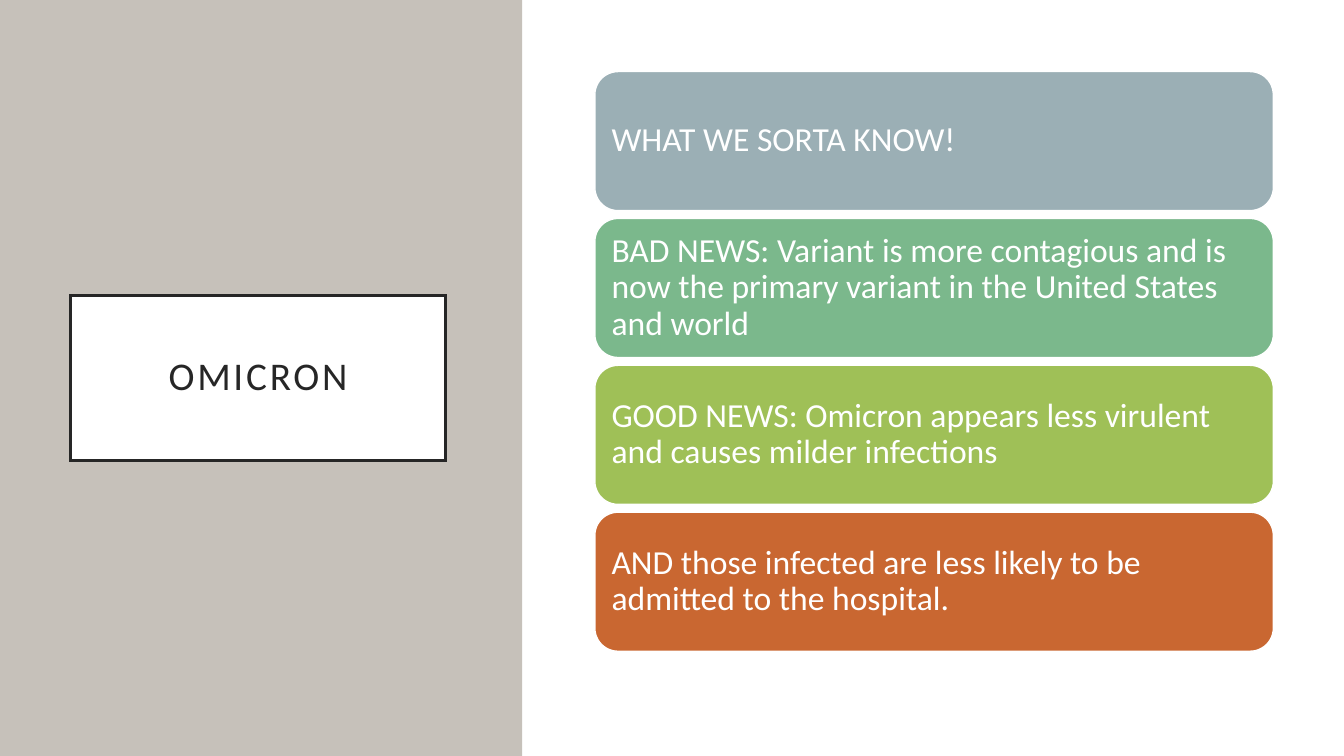
from collections import namedtuple

from lxml.etree import SubElement
from pptx import Presentation
from pptx.dml.color import RGBColor
from pptx.enum.shapes import MSO_SHAPE
from pptx.enum.text import MSO_ANCHOR, MSO_AUTO_SIZE, PP_ALIGN
from pptx.oxml.ns import qn
from pptx.util import Inches, Pt

Theme = namedtuple("Theme", "font ink white panel cards head body")
theme = Theme(
    font="Calibri",
    ink=RGBColor.from_string("262626"),
    white=RGBColor.from_string("FFFFFF"),
    panel=RGBColor.from_string("C6C1BA"),
    cards=[RGBColor.from_string(c) for c in ("9BAFB5", "7BB88C", "9FC057", "C96731")],
    head=Pt(28),
    body=Pt(24),
)


def paint(shape, fill, line=None, width=0):
    shape.fill.solid()
    shape.fill.fore_color.rgb = fill
    if line is None:
        shape.line.fill.background()
    else:
        shape.line.color.rgb = line
        shape.line.width = Pt(width)


def write(shape, text, size, color, align, inset):
    frame = shape.text_frame
    frame.text = text
    para = frame.paragraphs[0]
    pad = Inches(inset)
    formats = {
        frame: {"word_wrap": True, "auto_size": MSO_AUTO_SIZE.NONE,
                "vertical_anchor": MSO_ANCHOR.MIDDLE,
                "margin_left": pad, "margin_right": pad,
                "margin_top": pad, "margin_bottom": pad},
        para: {"alignment": align, "line_spacing": 0.9},
        para.runs[0].font: {"name": theme.font, "size": size},
    }
    for target, values in formats.items():
        for name, value in values.items():
            setattr(target, name, value)
    para.runs[0].font.color.rgb = color


deck = Presentation()
deck.slide_width = Inches(13.33)
deck.slide_height = Inches(7.5)
slide = deck.slides.add_slide(deck.slide_layouts[5])
shapes = slide.shapes

# Left panel
panel = shapes.add_shape(MSO_SHAPE.RECTANGLE, 0, 0, Inches(5.18), deck.slide_height)
panel.shadow.inherit = False
paint(panel, theme.panel)

# Title box, brought in front of the panel
title = shapes.title
place = {"left": 0.7, "top": 2.93, "width": 3.72, "height": 1.64}
for side, length in place.items():
    setattr(title, side, Inches(length))
paint(title, theme.white, theme.ink, 2.5)
SubElement(title.line._get_or_add_ln(), qn("a:miter"), lim="800000")
write(title, "OMICRON", theme.head, theme.ink, PP_ALIGN.CENTER, 0.2)
title.text_frame.paragraphs[0].runs[0]._r.get_or_add_rPr().set("spc", "200")
panel._element.addnext(title._element)

# Stack of cards
facts = [
    "WHAT WE SORTA KNOW!",
    "BAD NEWS: Variant is more contagious and is now the primary variant "
    "in the United States and world",
    "GOOD NEWS: Omicron appears less virulent and causes milder infections",
    "AND those infected are less likely to be admitted to the hospital.",
]
top, pitch = 0.71, 1.457
for row, (fact, color) in enumerate(zip(facts, theme.cards)):
    card = shapes.add_shape(MSO_SHAPE.ROUNDED_RECTANGLE, Inches(5.9),
                            Inches(top + row * pitch), Inches(6.73), Inches(1.38))
    card.shadow.inherit = False
    paint(card, color, theme.white, 1)
    write(card, fact, theme.body, theme.white, PP_ALIGN.LEFT, 0.1)

deck.save("out.pptx")
